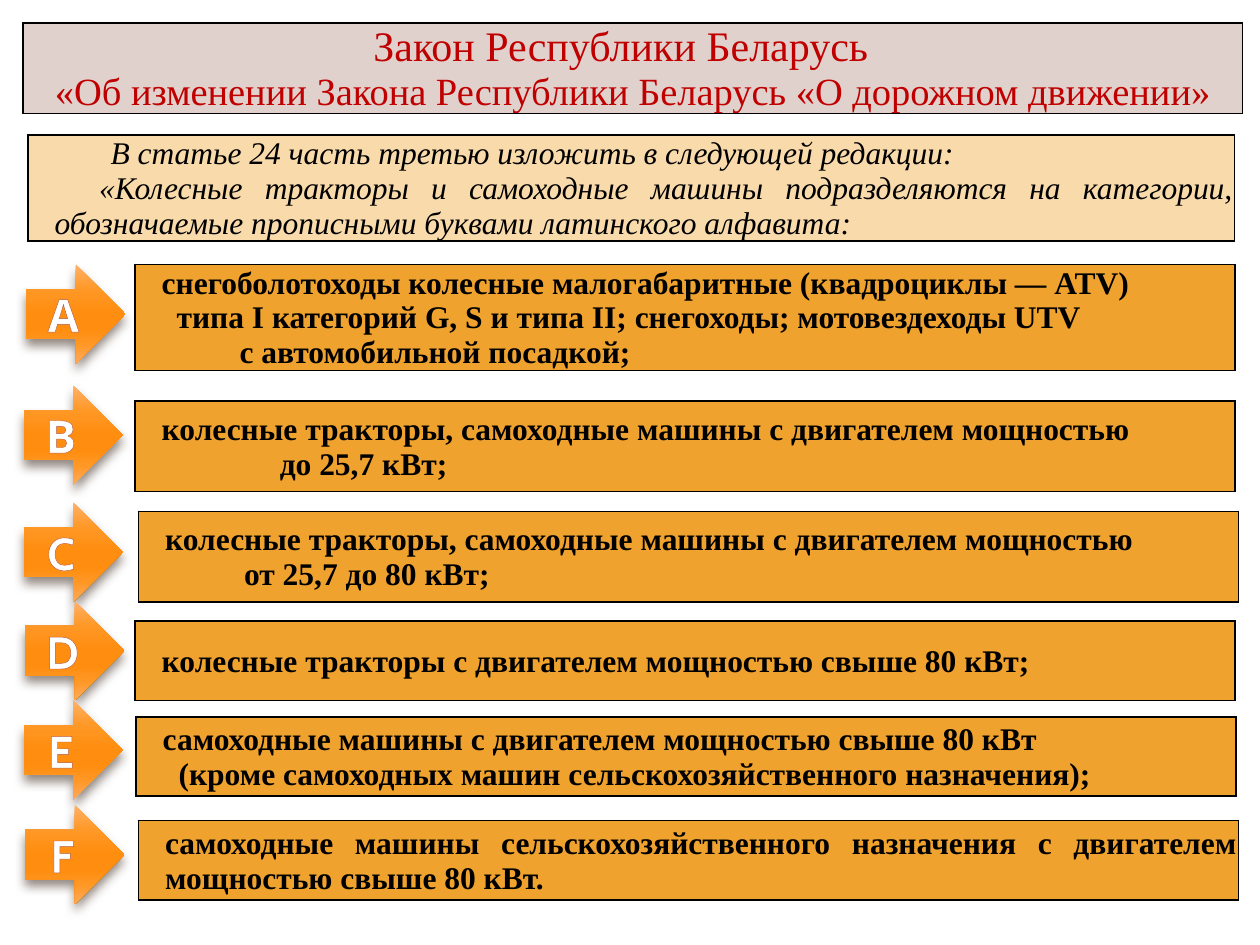
from dataclasses import dataclass

from lxml.etree import SubElement
from pptx import Presentation
from pptx.dml.color import RGBColor
from pptx.enum.shapes import MSO_SHAPE
from pptx.enum.text import MSO_ANCHOR, PP_ALIGN
from pptx.oxml import parse_xml
from pptx.oxml.ns import nsdecls, qn
from pptx.util import Cm, Pt


@dataclass(frozen=True)
class Theme:
    text_font: str = "Times New Roman"
    letter_font: str = "Cabin"
    black: str = "000000"
    white: str = "FFFFFF"
    title_text: str = "C00000"
    title_fill: str = "E1D1CC"
    intro_fill: str = "F9DAAB"
    category_fill: str = "F0A22E"
    letter_outline: str = "B65B3D"
    arrow_shadow: str = "4E3B30"
    arrow_stops: tuple = ((0, "FFB16A"), (25, "FF9826"), (50, "FF8D0F"),
                          (65, "FF8D0F"), (80, "FF9724"), (100, "FFAA5C"))
    title_size: int = 24
    subtitle_size: int = 22
    body_size: int = 18
    letter_size: int = 26


theme = Theme()


def add_span(para, text, size, color, font_name, bold=False, italic=False):
    span = para.add_run()
    span.text = text
    span.font.size = Pt(size)
    span.font.name = font_name
    span.font.bold = bold
    span.font.italic = italic
    span.font.color.rgb = RGBColor.from_string(color)
    return span


def add_framed_cell(page, left, top, width, height, fill):
    """Add a bordered one-cell table and return its cell."""
    table = page.shapes.add_table(1, 1, Cm(left), Cm(top), Cm(width), Cm(height)).table
    table.first_row = table.horz_banding = False
    cell = table.cell(0, 0)
    cell.margin_left = cell.margin_right = cell.margin_top = Cm(0.03)
    cell.margin_bottom = 0
    cell.vertical_anchor = MSO_ANCHOR.MIDDLE
    properties = cell._tc.get_or_add_tcPr()
    for side in ("lnL", "lnR", "lnT", "lnB"):
        border = SubElement(properties, qn(f"a:{side}"), w=str(Pt(1)))
        paint = SubElement(border, qn("a:solidFill"))
        SubElement(paint, qn("a:srgbClr"), val=theme.black)
    cell.fill.solid()
    cell.fill.fore_color.rgb = RGBColor.from_string(fill)
    return cell


deck = Presentation()
deck.slide_width, deck.slide_height = Cm(25.4), Cm(19.05)
page = deck.slides.add_slide(deck.slide_layouts[6])

# Title band: text, size, right margin
title_lines = [
    ("Закон Республики Беларусь", theme.title_size, 0.48),
    ("«Об изменении Закона Республики Беларусь «О дорожном движении»",
     theme.subtitle_size, 0),
]
frame = add_framed_cell(page, 0.46, 0.46, 24.59, 1.81, theme.title_fill).text_frame
for index, (text, size, right_margin) in enumerate(title_lines):
    para = frame.add_paragraph() if index else frame.paragraphs[0]
    para.alignment = PP_ALIGN.CENTER
    para._p.get_or_add_pPr().set("marR", str(Cm(right_margin)))
    add_span(para, text, size, theme.title_text, theme.text_font)

# Text boxes: left, top, width, height, fill, italic, lines with first-line indent
intro = (0.56, 2.72, 24.33, 2.14, theme.intro_fill, True, [
    ("В статье 24 часть третью изложить в следующей редакции:", 1.13),
    ("«Колесные тракторы и самоходные машины подразделяются на категории, "
     "обозначаемые прописными буквами латинского алфавита:", 0.9),
])

# Categories: letter, arrow left and top, box left, top and height, lines
categories = [
    ("А", 0.53, 5.33, 2.72, 5.33, 2.14, [
        ("снегоболотоходы колесные малогабаритные (квадроциклы — ATV)", 0),
        ("типа I категорий G, S и типа II; снегоходы; мотовездеходы UTV", 0.3),
        ("с автомобильной посадкой;", 1.57)]),
    ("В", 0.48, 7.77, 2.72, 8.08, 1.83, [
        ("колесные тракторы, самоходные машины с двигателем мощностью", 0),
        ("до 25,7 кВт;", 2.38)]),
    ("C", 0.48, 10.13, 2.79, 10.31, 1.83, [
        ("колесные тракторы, самоходные машины с двигателем мощностью", 0),
        ("от 25,7 до 80 кВт;", 1.59)]),
    ("D", 0.51, 12.12, 2.72, 12.52, 1.6, [
        ("колесные тракторы с двигателем мощностью свыше 80 кВт;", 0)]),
    ("E", 0.48, 14.12, 2.74, 14.45, 1.6, [
        ("самоходные машины с двигателем мощностью свыше 80 кВт", 0),
        ("(кроме самоходных машин сельскохозяйственного назначения);", 0.32)]),
    ("F", 0.51, 16.23, 2.79, 16.54, 1.6, [
        ("самоходные машины сельскохозяйственного назначения с двигателем "
         "мощностью свыше 80 кВт.", 0)]),
]
boxes = [intro] + [(left, top, 22.18, height, theme.category_fill, False, lines)
                   for _, _, _, left, top, height, lines in categories]

for left, top, width, height, fill, italic, lines in boxes:
    frame = add_framed_cell(page, left, top, width, height, fill).text_frame
    for index, (text, indent) in enumerate(lines):
        para = frame.add_paragraph() if index else frame.paragraphs[0]
        para.alignment = PP_ALIGN.JUSTIFY
        properties = para._p.get_or_add_pPr()
        properties.set("marL", str(Cm(0.51)))
        properties.set("indent", str(Cm(indent)))
        add_span(para, text, theme.body_size, theme.black, theme.text_font,
                 bold=not italic, italic=italic)

# Letter arrows
stops = "".join(f'<a:gs pos="{position * 1000}"><a:srgbClr val="{color}"/></a:gs>'
                for position, color in theme.arrow_stops)
gradient = (f'<a:gradFill {nsdecls("a")} rotWithShape="1"><a:gsLst>{stops}</a:gsLst>'
            '<a:lin ang="5400000" scaled="0"/></a:gradFill>')
shadow = (f'<a:effectLst {nsdecls("a")}><a:outerShdw blurRad="{Pt(6)}" dist="{Pt(4)}" '
          f'dir="5400000" rotWithShape="0"><a:srgbClr val="{theme.arrow_shadow}">'
          '<a:alpha val="60000"/></a:srgbClr></a:outerShdw></a:effectLst>')
outline = (f'<a:ln {nsdecls("a")} w="{Pt(1.42)}"><a:solidFill>'
           f'<a:srgbClr val="{theme.letter_outline}"/></a:solidFill></a:ln>')

for letter, left, top, *_ in categories:
    arrow = page.shapes.add_shape(MSO_SHAPE.RIGHT_ARROW, Cm(left), Cm(top), Cm(2), Cm(2))
    arrow._element.spPr.append(parse_xml(gradient))
    arrow.line.fill.background()
    arrow._element.spPr.append(parse_xml(shadow))
    arrow.text_frame.vertical_anchor = MSO_ANCHOR.MIDDLE
    para = arrow.text_frame.paragraphs[0]
    para.alignment = PP_ALIGN.CENTER
    span = add_span(para, letter, theme.letter_size, theme.white, theme.letter_font, bold=True)
    span._r.get_or_add_rPr().insert(0, parse_xml(outline))

deck.save("out.pptx")
